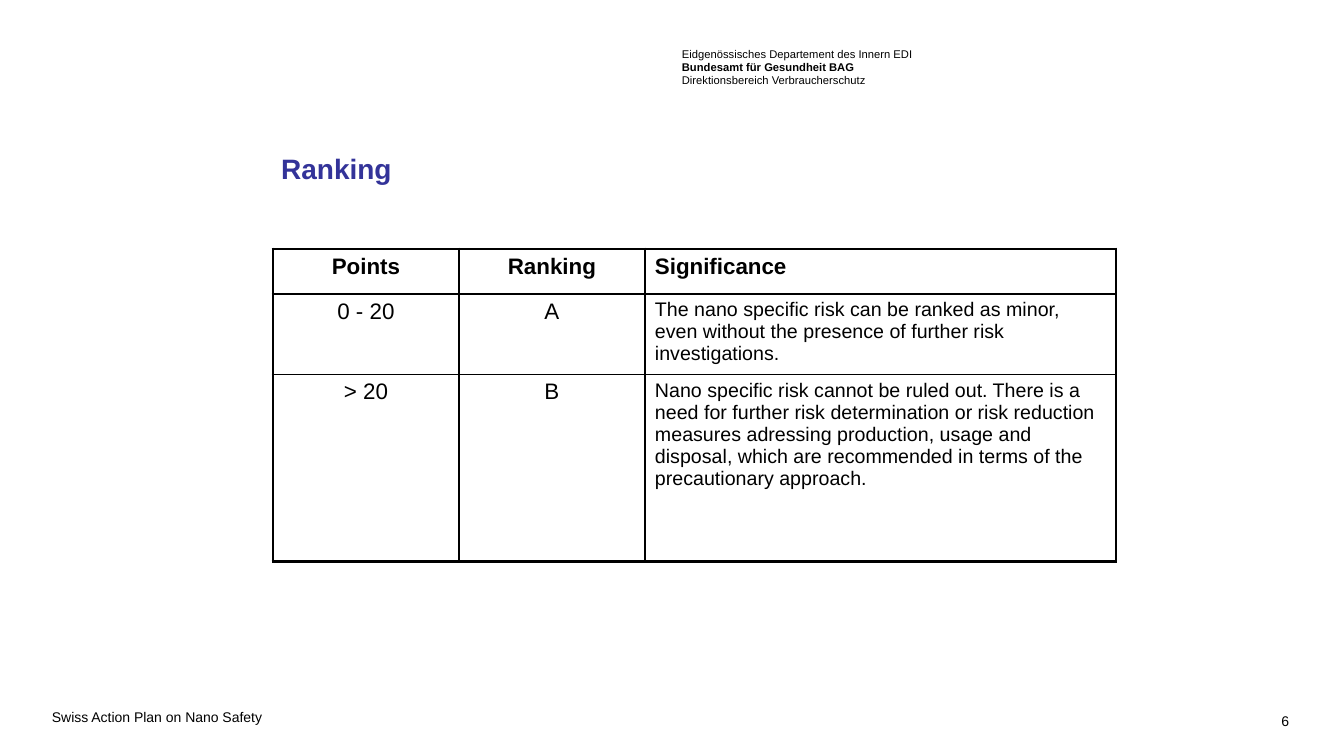
from dataclasses import dataclass

from lxml.etree import SubElement
from pptx import Presentation
from pptx.dml.color import RGBColor
from pptx.enum.text import MSO_ANCHOR, PP_ALIGN
from pptx.oxml.ns import qn
from pptx.util import Pt


@dataclass(frozen=True)
class Theme:
    font: str = "Arial"
    ink: str = "000000"
    accent: str = "333399"
    paper: str = "FFFFFF"
    title: int = 20
    cell: int = 16
    detail: int = 14
    footer: int = 10
    header: int = 8
    frame: float = 2.25
    grid: float = 1


THEME = Theme()
EMU_PER_INCH = 914400
PX_PER_INCH = 100.8

DEPARTMENT = [
    ("Eidgenössisches Departement des Innern EDI", False),
    ("Bundesamt für Gesundheit BAG", True),
    ("Direktionsbereich Verbraucherschutz", False),
]
COLUMN_WIDTHS = [186, 186, 471]
ROW_HEIGHTS = [45, 76, 187]
RANKING = [
    ("Points", "Ranking", "Significance"),
    ("0 - 20", "A",
     "The nano specific risk can be ranked as minor, even without the "
     "presence of further risk investigations."),
    ("> 20", "B",
     "Nano specific risk cannot be ruled out. There is a need for further "
     "risk determination or risk reduction measures adressing production, "
     "usage and disposal, which are recommended in terms of the "
     "precautionary approach."),
]


def px(n):
    return round(n * EMU_PER_INCH / PX_PER_INCH)


def style(p, size, bold=False, color=THEME.ink, align=PP_ALIGN.LEFT):
    p.alignment = align
    p.font.name = THEME.font
    p.font.size = Pt(size)
    p.font.bold = bold
    p.font.color.rgb = RGBColor.from_string(color)


def add_text(s, box, lines, size, align=PP_ALIGN.LEFT):
    tf = s.shapes.add_textbox(*map(px, box)).text_frame
    tf.word_wrap = True
    for i, (text, bold) in enumerate(lines):
        p = tf.paragraphs[0] if i == 0 else tf.add_paragraph()
        p.text = text
        style(p, size, bold, align=align)


def set_title(s, box, text):
    sp = s.shapes.title
    sp.left, sp.top, sp.width, sp.height = map(px, box)
    sp.fill.solid()
    sp.fill.fore_color.rgb = RGBColor.from_string(THEME.paper)
    tf = sp.text_frame
    tf.vertical_anchor = MSO_ANCHOR.TOP
    tf.text = text
    style(tf.paragraphs[0], THEME.title, True, THEME.accent)


def set_borders(cell, outer_edges):
    tc_pr = cell._tc.get_or_add_tcPr()
    for edge, outer in outer_edges.items():
        width = Pt(THEME.frame if outer else THEME.grid)
        ln = SubElement(tc_pr, qn(f"a:ln{edge}"), w=str(int(width)))
        fill = SubElement(ln, qn("a:solidFill"))
        SubElement(fill, qn("a:srgbClr"), val=THEME.ink)


def add_ranking_table(s, box):
    last_row, last_col = len(ROW_HEIGHTS) - 1, len(COLUMN_WIDTHS) - 1
    table = s.shapes.add_table(last_row + 1, last_col + 1, *map(px, box)).table
    table.first_row = table.horz_banding = False
    for column, width in zip(table.columns, COLUMN_WIDTHS):
        column.width = px(width)
    for row, height in zip(table.rows, ROW_HEIGHTS):
        row.height = px(height)
    for r, texts in enumerate(RANKING):
        for c, text in enumerate(texts):
            cell = table.cell(r, c)
            cell.text = text
            heading, detail = r == 0, c == last_col
            style(cell.text_frame.paragraphs[0],
                  THEME.detail if detail and not heading else THEME.cell,
                  heading,
                  align=PP_ALIGN.LEFT if detail else PP_ALIGN.CENTER)
            set_borders(cell, {"L": c == 0, "R": c == last_col,
                               "T": r == 0, "B": r == last_row})
            cell.fill.background()


def add_footer(s, box, text, number):
    left, top, width, height = box
    add_text(s, (left, top, 1087, height), [(text, False)], THEME.footer)
    number_width = 123
    add_text(s, (left + width - number_width, top + 4, number_width, 27),
             [(number, False)], THEME.footer, PP_ALIGN.RIGHT)


def build_ranking_slide(prs):
    s = prs.slides.add_slide(prs.slide_layouts[5])
    add_text(s, (672, 42, 605, 51), DEPARTMENT, THEME.header)
    set_title(s, (271, 146, 531, 68), "Ranking")
    add_ranking_table(s, (273, 249, sum(COLUMN_WIDTHS), sum(ROW_HEIGHTS)))
    add_footer(s, (42, 704, 1257, 52), "Swiss Action Plan on Nano Safety", "6")


def main():
    prs = Presentation()
    prs.slide_width, prs.slide_height = px(1344), px(756)
    build_ranking_slide(prs)
    prs.save("out.pptx")


if __name__ == "__main__":
    main()
